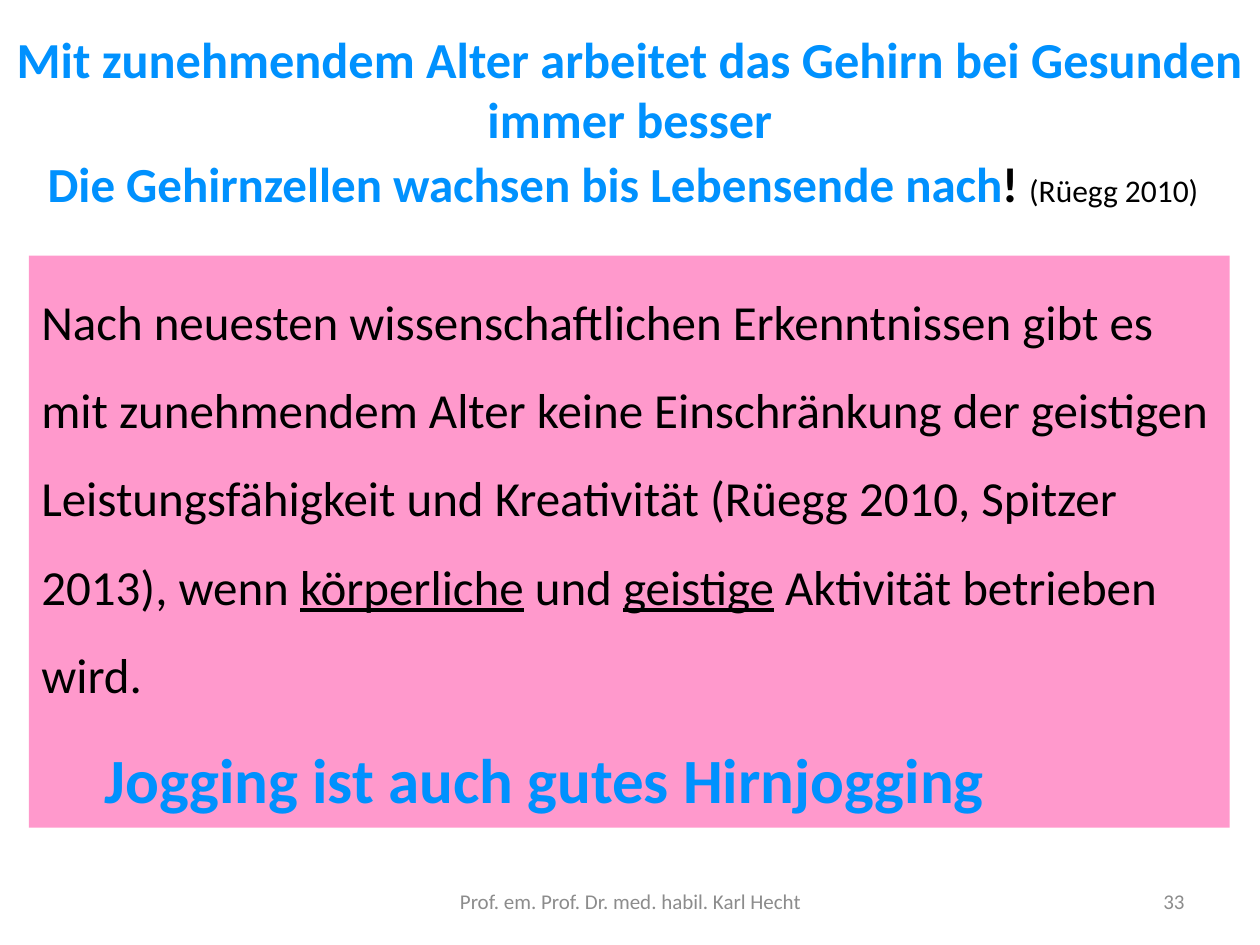
from dataclasses import dataclass
from typing import Optional

from pptx import Presentation
from pptx.dml.color import RGBColor
from pptx.enum.shapes import MSO_SHAPE as Shape
from pptx.enum.text import MSO_ANCHOR as Anchor, PP_ALIGN as Align
from pptx.util import Inches, Pt

WIDTH, HEIGHT = 10, 7.5
BLUE, BLACK, GREY = "0091FE", "000000", "8C8C8C"
WHITE, PINK = "FFFFFF", "FF99CC"


@dataclass
class Area:
    """A place on the slide, in inches."""
    left: float
    top: float
    width: float
    height: float

    def lengths(self) -> list:
        return [Inches(n) for n in (self.left, self.top, self.width, self.height)]


@dataclass
class Span:
    text: str
    size: float = 28
    color: str = BLACK
    bold: bool = False
    underline: bool = False


def rgb(color: str) -> RGBColor:
    return RGBColor.from_string(color)


def add_text(slide, area: Area, *paragraphs: list[Span], fill: Optional[str] = None,
             align=Align.LEFT, anchor=Anchor.TOP, spacing: Optional[float] = None,
             wrap: bool = True) -> None:
    """Add a text box, or a filled rectangle with text when a fill is given."""
    if fill:
        box = slide.shapes.add_shape(Shape.RECTANGLE, *area.lengths())
        box.shadow.inherit = False
        box.fill.solid()
        box.fill.fore_color.rgb = rgb(fill)
        box.line.fill.background()
    else:
        box = slide.shapes.add_textbox(*area.lengths())
    frame = box.text_frame
    frame.word_wrap = wrap
    frame.vertical_anchor = anchor
    for index, spans in enumerate(paragraphs):
        para = frame.add_paragraph() if index else frame.paragraphs[0]
        para.alignment = align
        if spacing:
            para.line_spacing = spacing
        for span in spans:
            run = para.add_run()
            run.text = span.text
            font = run.font
            font.name, font.size = "Calibri", Pt(span.size)
            font.bold, font.underline = span.bold, span.underline
            font.color.rgb = rgb(span.color)


def main() -> None:
    deck = Presentation()
    deck.slide_width, deck.slide_height = Inches(WIDTH), Inches(HEIGHT)
    slide = deck.slides.add_slide(deck.slide_layouts[6])

    add_text(slide, Area(0, 0.23, WIDTH, 0.94),
             [Span("Mit zunehmendem Alter arbeitet das Gehirn bei Gesunden immer besser",
                   size=28.8, color=BLUE, bold=True)],
             fill=WHITE, align=Align.CENTER, anchor=Anchor.MIDDLE)

    add_text(slide, Area(0.23, 2.03, 9.53, 4.54),
             [Span("Nach neuesten wissenschaftlichen Erkenntnissen gibt es mit zunehmendem "
                   "Alter keine Einschränkung der geistigen Leistungsfähigkeit und "
                   "Kreativität (Rüegg 2010, Spitzer 2013), wenn "),
              Span("körperliche", underline=True),
              Span(" und "),
              Span("geistige", underline=True),
              Span(" Aktivität betrieben wird.")],
             [Span("\t", bold=True),
              Span("Jogging ist auch gutes Hirnjogging", size=36, color=BLUE, bold=True)],
             fill=PINK, spacing=1.5)

    add_text(slide, Area(0.28, 1.17, 9.45, 0.57),
             [Span("Die Gehirnzellen wachsen bis Lebensende nach", color=BLUE, bold=True),
              Span("! ", bold=True),
              Span("(Rüegg 2010)", size=18)],
             wrap=False)

    footer_top, footer_height = 6.95, 0.4
    add_text(slide, Area(7.17, footer_top, 2.33, footer_height),
             [Span("33", size=12, color=GREY)],
             align=Align.RIGHT, anchor=Anchor.MIDDLE)
    add_text(slide, Area(3.42, footer_top, 3.17, footer_height),
             [Span("Prof. em. Prof. Dr. med. habil. Karl Hecht", size=12, color=GREY)],
             align=Align.CENTER, anchor=Anchor.MIDDLE)

    deck.save("out.pptx")


if __name__ == "__main__":
    main()
